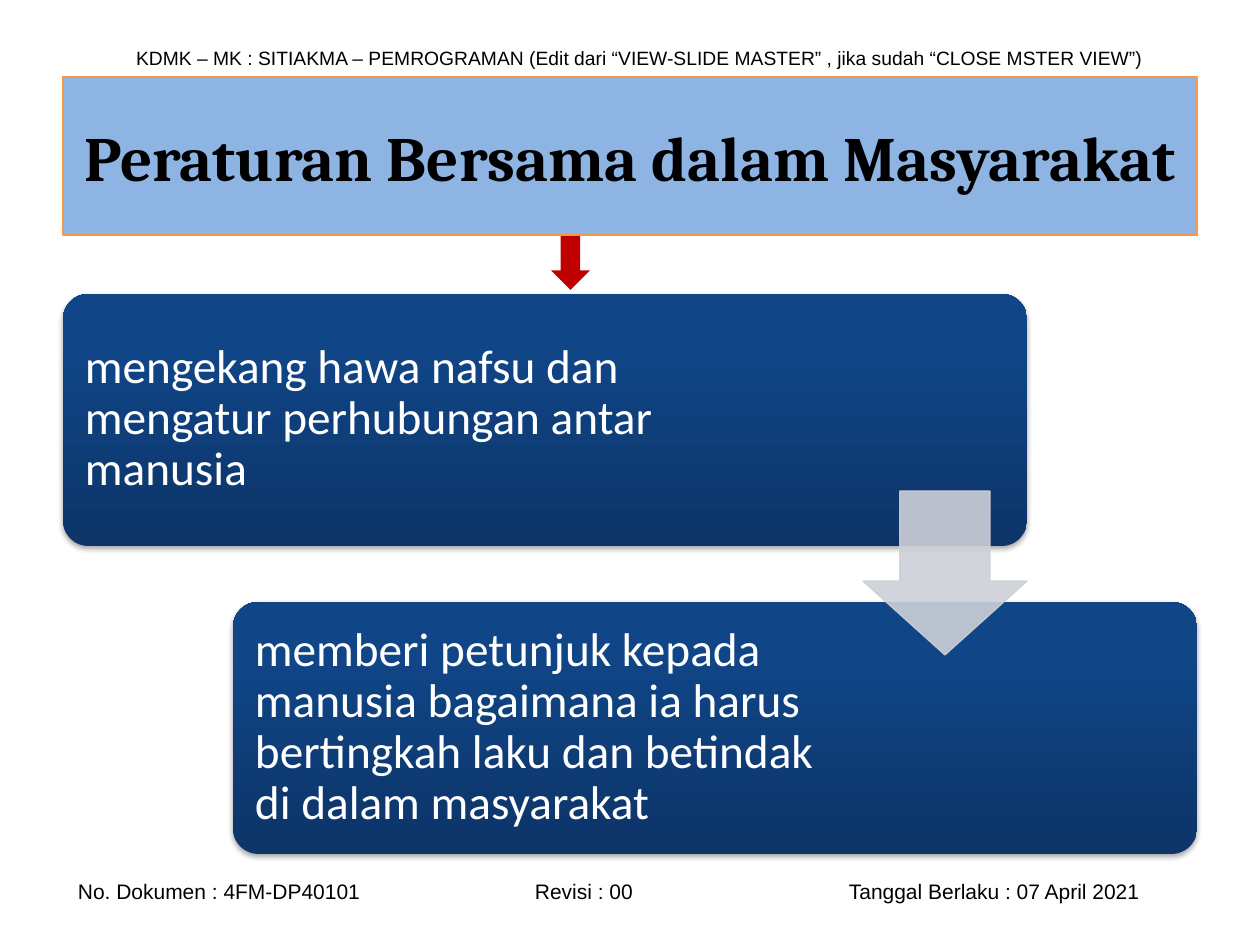
"""Build a slide showing the two purposes of shared rules in society."""
import lxml.etree
import pptx
import pptx.dml.color
import pptx.enum.shapes
import pptx.enum.text
import pptx.oxml.ns
import pptx.util

PX = 914400 // 126
COLORS = {
    "text": "000000", "white": "FFFFFF", "title": "8EB4E3", "title_line": "F79646",
    "red": "C00000", "card_bottom": "0D3568", "card_top": "104587", "arrow": "CDD0D7",
}
SHAPES = pptx.enum.shapes.MSO_SHAPE
ANCHOR = pptx.enum.text.MSO_ANCHOR
ALIGN = pptx.enum.text.PP_ALIGN
qn = pptx.oxml.ns.qn


def rgb(name):
    return pptx.dml.color.RGBColor.from_string(COLORS[name])


def write(box, text, font, size, color, margin, align=ALIGN.LEFT):
    frame = box.text_frame
    frame.word_wrap = True
    frame.auto_size = pptx.enum.text.MSO_AUTO_SIZE.NONE
    frame.vertical_anchor = ANCHOR.MIDDLE
    frame.margin_left = frame.margin_right = margin * PX
    frame.margin_top = frame.margin_bottom = margin * PX
    para = frame.paragraphs[0]
    para.text = text
    para.alignment = align
    para.font.name = font
    para.font.size = pptx.util.Pt(size)
    para.font.color.rgb = rgb(color)
    return para


deck = pptx.Presentation()
deck.slide_width = 1260 * PX
deck.slide_height = 945 * PX
page = deck.slides.add_slide(deck.slide_layouts[5])
shapes = page.shapes

header = shapes.add_textbox(136 * PX, 39 * PX, 1040 * PX, 37 * PX)
write(header, "KDMK – MK : SITIAKMA – PEMROGRAMAN (Edit dari “VIEW-SLIDE MASTER” , "
      "jika sudah “CLOSE MSTER VIEW”)", "Arial", 11, "text", 0)

footer = shapes.add_textbox(78 * PX, 872 * PX, 1138 * PX, 38 * PX)
footer_para = footer.text_frame.paragraphs[0]
tabs = lxml.etree.SubElement(footer_para._p.get_or_add_pPr(), qn("a:tabLst"))
for position in (457, 771):
    lxml.etree.SubElement(tabs, qn("a:tab"), pos=str(position * PX), algn="l")
write(footer, "No. Dokumen : 4FM-DP40101\tRevisi : 00\tTanggal Berlaku : 07 April 2021",
      "Arial", 12, "text", 0)

pointer = shapes.add_shape(SHAPES.DOWN_ARROW, 551 * PX, 224 * PX, 39 * PX, 66 * PX)
pointer.shadow.inherit = False
pointer.fill.solid()
pointer.fill.fore_color.rgb = rgb("red")
pointer.line.fill.background()

title = shapes.title
title.left, title.top, title.width, title.height = 63 * PX, 77 * PX, 1134 * PX, 158 * PX
title.fill.solid()
title.fill.fore_color.rgb = rgb("title")
title.line.color.rgb = rgb("title_line")
title.line.width = pptx.util.Pt(0.75)
title_para = write(title, "Peraturan Bersama dalam Masyarakat", "Cambria", 36, "text", 10, ALIGN.CENTER)
title_para.font.bold = True
pointer.element.addnext(title.element)

cards = [
    (63, 294, 703, "mengekang hawa nafsu dan mengatur perhubungan antar manusia"),
    (233, 602, 615, "memberi petunjuk kepada manusia bagaimana ia harus bertingkah laku "
                    "dan betindak di dalam masyarakat"),
]
for left, top, text_width, text in cards:
    card = shapes.add_shape(SHAPES.ROUNDED_RECTANGLE, left * PX, top * PX, 964 * PX, 252 * PX)
    card.adjustments[0] = 0.1
    card.line.fill.background()
    card.fill.gradient()
    card.fill.gradient_angle = 90
    for stop, name, position in zip(card.fill.gradient_stops, ("card_bottom", "card_top"), (0, 0.8)):
        stop.color.rgb = rgb(name)
        stop.position = position
    card.shadow.inherit = False
    effects = card.element.spPr.find(qn("a:effectLst"))
    shadow = lxml.etree.SubElement(effects, qn("a:outerShdw"), blurRad="39370", dist="22860",
                                   dir="5400000", rotWithShape="0")
    shade = lxml.etree.SubElement(shadow, qn("a:srgbClr"), val=COLORS["text"])
    lxml.etree.SubElement(shade, qn("a:alpha"), val="35000")

    label = shapes.add_textbox((left + 8) * PX, (top + 7) * PX, text_width * PX, 237 * PX)
    para = write(label, text, "Calibri", 27, "white", 14)
    para.line_spacing = 0.9

arrow = shapes.add_shape(SHAPES.DOWN_ARROW, 863 * PX, 491 * PX, 164 * PX, 164 * PX)
arrow.adjustments[0] = 0.55
arrow.adjustments[1] = 0.45
arrow.shadow.inherit = False
arrow.fill.solid()
arrow.fill.fore_color.rgb = rgb("arrow")
arrow.line.color.rgb = rgb("arrow")
arrow.line.width = pptx.util.Pt(0.75)
for color in arrow.element.spPr.iter(qn("a:srgbClr")):
    lxml.etree.SubElement(color, qn("a:alpha"), val="90000")

deck.save("out.pptx")
